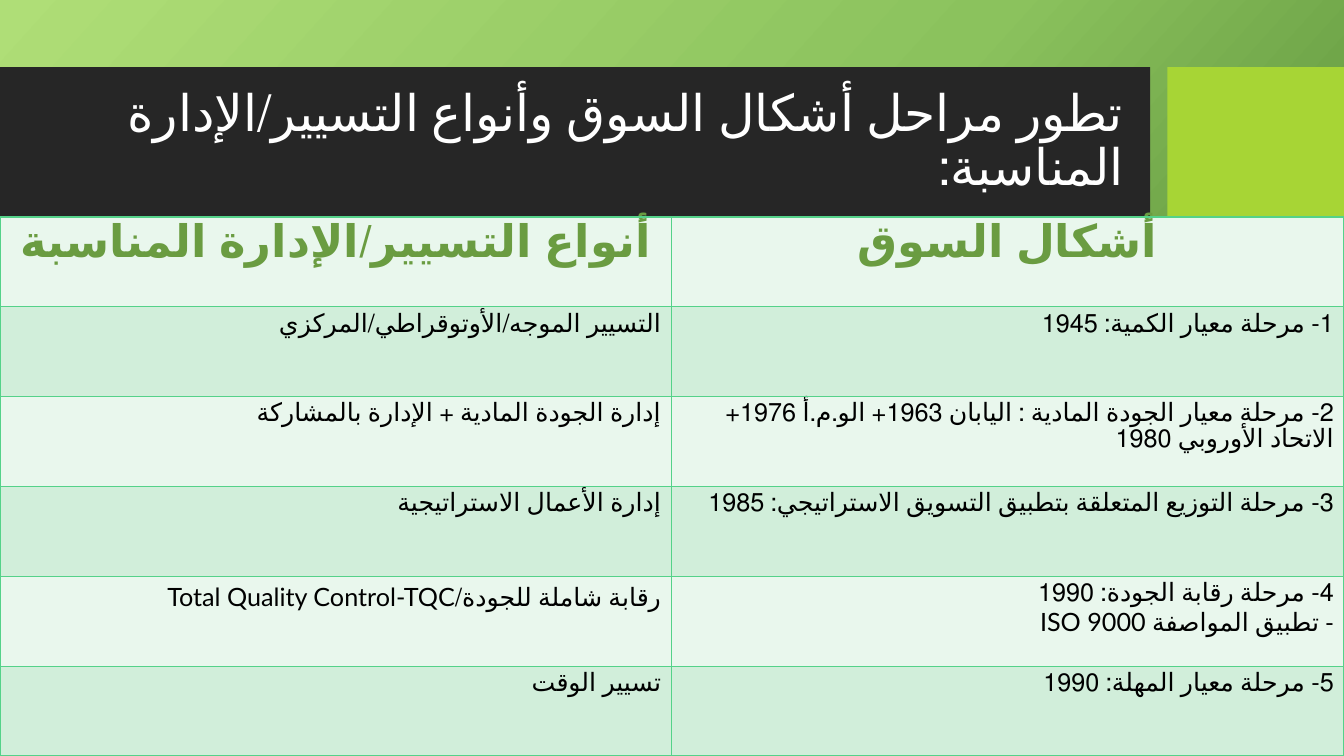
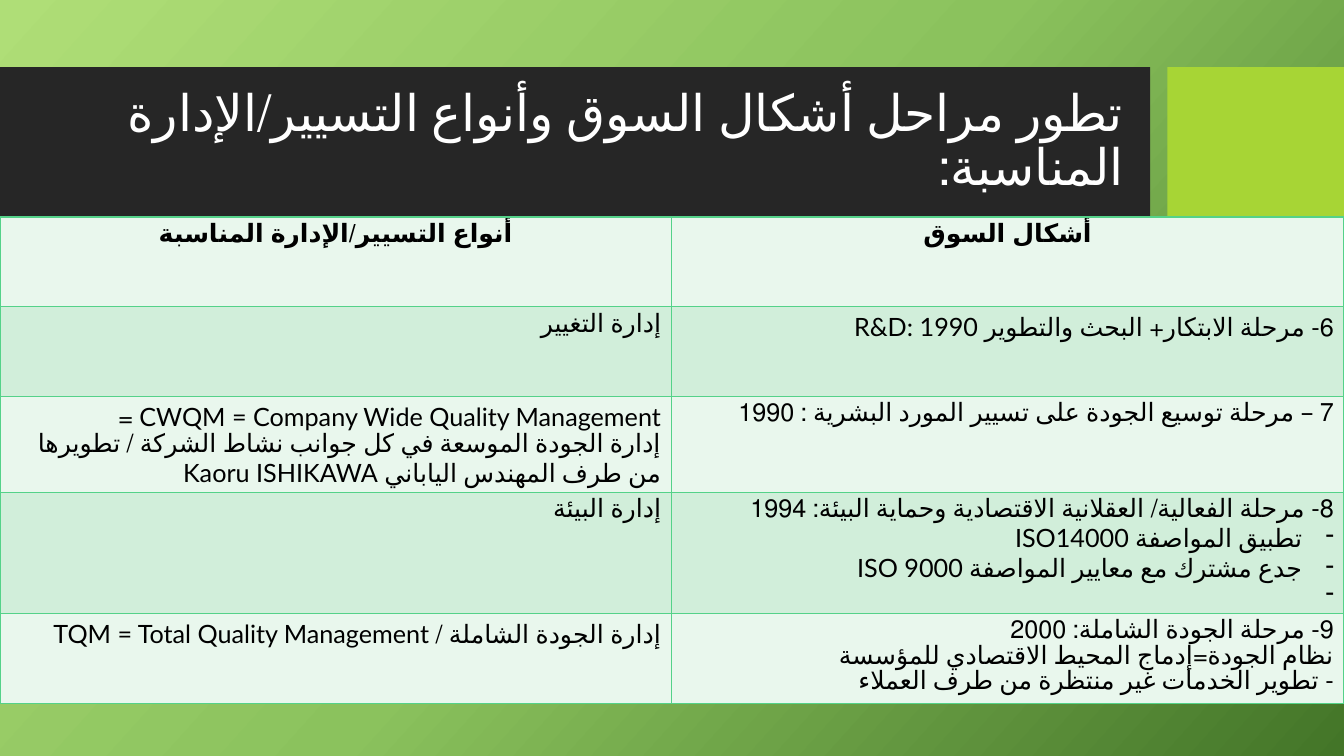
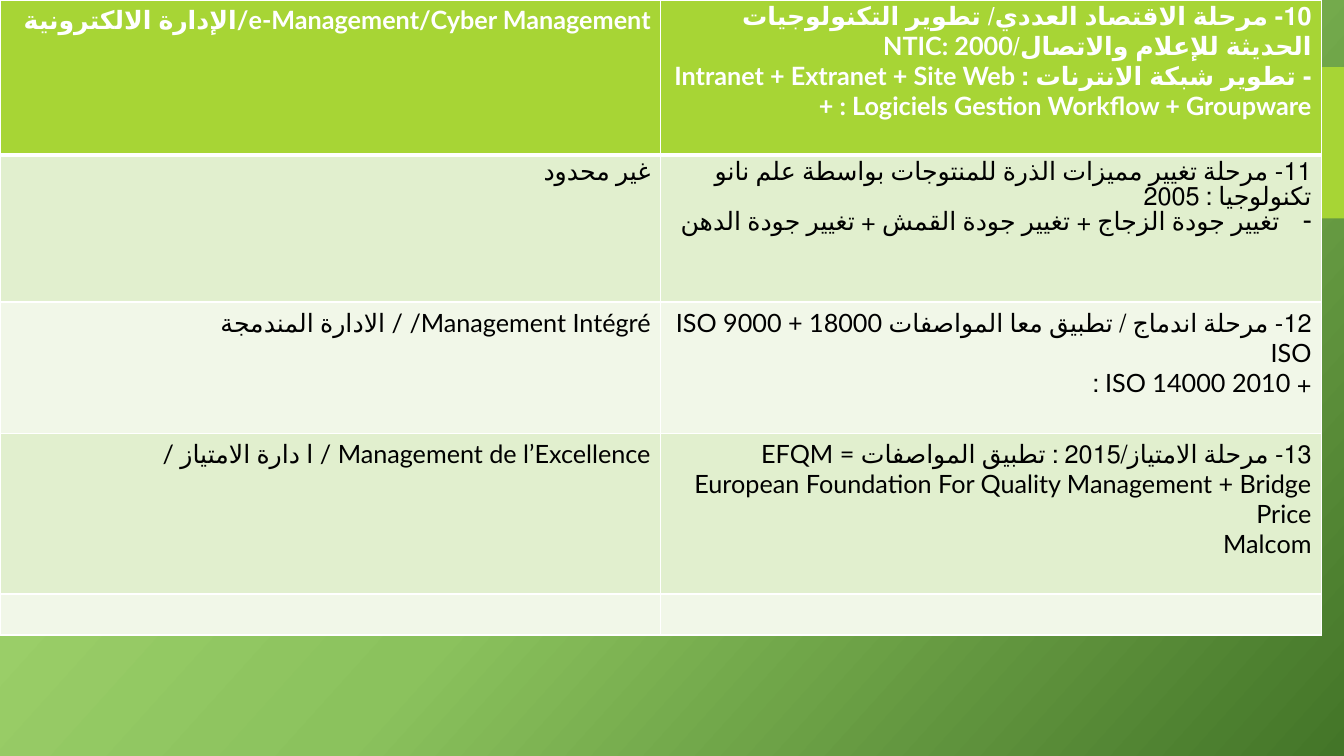
from copy import deepcopy

from pptx import Presentation
from pptx.dml.color import RGBColor
from pptx.enum.lang import MSO_LANGUAGE_ID
from pptx.enum.shapes import MSO_SHAPE
from pptx.enum.text import MSO_ANCHOR, MSO_AUTO_SIZE, PP_ALIGN
from pptx.oxml.ns import qn
from pptx.oxml.xmlchemy import OxmlElement
from pptx.util import Pt

RECT = MSO_SHAPE.RECTANGLE
MIDDLE = MSO_ANCHOR.MIDDLE
NO_FIT = MSO_AUTO_SIZE.NONE
RIGHT, CENTER = PP_ALIGN.RIGHT, PP_ALIGN.CENTER
ARABIC = MSO_LANGUAGE_ID.ARABIC_ALGERIA

WHITE = RGBColor(0xFF, 0xFF, 0xFF)
BLACK = RGBColor(0x00, 0x00, 0x00)
DARK = RGBColor(0x26, 0x26, 0x26)
LIME = RGBColor(0xA7, 0xD5, 0x35)
GREEN = RGBColor(0x6A, 0x9C, 0x41)
MINT = RGBColor(0x54, 0xD2, 0x89)
MINT_MID = RGBColor(0xD1, 0xEE, 0xDA)
MINT_PALE = RGBColor(0xE9, 0xF7, 0xED)
LIME_MID = RGBColor(0xE1, 0xEF, 0xCE)
LIME_PALE = RGBColor(0xF1, 0xF7, 0xE8)
STOPS = [(0, RGBColor(0xAF, 0xDE, 0x77)),
         (0.5, RGBColor(0x8B, 0xC2, 0x5D)),
         (1, RGBColor(0x43, 0x75, 0x28))]

FONT = "Lato"
TITLE = "تطور مراحل أشكال السوق وأنواع التسيير/الإدارة المناسبة:"
HEAD = ("أنواع التسيير/الإدارة المناسبة", "أشكال السوق")
DASH = "~"  # marks a dash bullet

# Cell texts: left and right column, one line per paragraph
EARLY = [
    HEAD,
    ("التسيير الموجه/الأوتوقراطي/المركزي", "1- مرحلة معيار الكمية: 1945"),
    ("إدارة الجودة المادية + الإدارة بالمشاركة",
     "2- مرحلة معيار الجودة المادية : اليابان 1963+ الو.م.أ 1976+ الاتحاد الأوروبي 1980"),
    ("إدارة الأعمال الاستراتيجية",
     "3- مرحلة التوزيع المتعلقة بتطبيق التسويق الاستراتيجي: 1985"),
    ("رقابة شاملة للجودة/Total Quality Control-TQC",
     "4- مرحلة رقابة الجودة: 1990\n- تطبيق المواصفة ISO 9000"),
    ("تسيير الوقت", "5- مرحلة معيار المهلة: 1990"),
]
MODERN = [
    HEAD,
    ("إدارة التغيير", "6- مرحلة الابتكار+ البحث والتطوير R&D: 1990"),
    ("CWQM = Company Wide Quality Management =\n"
     "إدارة الجودة الموسعة في كل جوانب نشاط الشركة / تطويرها من طرف المهندس الياباني Kaoru ISHIKAWA",
     "7 – مرحلة توسيع الجودة على تسيير المورد البشرية : 1990"),
    ("إدارة البيئة",
     "8- مرحلة الفعالية/ العقلانية الاقتصادية وحماية البيئة: 1994\n"
     "~تطبيق المواصفة ISO14000\n"
     "~جدع مشترك مع معايير المواصفة ISO 9000\n"
     "~ "),
    ("إدارة الجودة الشاملة / TQM = Total Quality Management",
     "9- مرحلة الجودة الشاملة: 2000\n"
     "نظام الجودة=إدماج المحيط الاقتصادي للمؤسسة\n"
     "- تطوير الخدمات غير منتظرة من طرف العملاء"),
]
RECENT = [
    ("الإدارة الالكترونية/e-Management/Cyber Management",
     "10- مرحلة الاقتصاد العددي/ تطوير التكنولوجيات الحديثة للإعلام والاتصال/NTIC: 2000\n"
     "- تطوير شبكة الانترنات : Intranet + Extranet + Site Web + : "
     "Logiciels Gestion Workflow + Groupware"),
    ("غير محدود",
     "11- مرحلة تغيير مميزات الذرة للمنتوجات بواسطة علم نانو تكنولوجيا : 2005\n"
     "~تغيير جودة الزجاج + تغيير جودة القمش + تغيير جودة الدهن"),
    ("الادارة المندمجة / /Management Intégré",
     "12- مرحلة اندماج / تطبيق معا المواصفات ISO 9000 + 18000 ISO\n"
     "+ ISO 14000 2010 :"),
    ("/ ا دارة الامتياز / Management de l’Excellence",
     "13- مرحلة الامتياز/2015 : تطبيق المواصفات EFQM = "
     "European Foundation For Quality Management + Bridge Price\nMalcom"),
    ("", ""),
]

# One entry per slide: titled, rows, top, column widths, row heights,
# header (size, colour, fill, rule width), line colour, band fills
DECK = [
    (True, EARLY, 155, (479.5, 480.5), [64.2] * 6,
     (32, GREEN, MINT_PALE, 1), MINT, (MINT_MID, MINT_PALE)),
    (True, MODERN, 155, (479.5, 480.5), [64.2, 64.2, 68.5, 86.5, 64.2],
     (18, BLACK, MINT_PALE, 1), MINT, (MINT_MID, MINT_PALE)),
    (False, RECENT, 0, (472, 472), [110.8, 105, 93.6, 115, 29.3],
     (18, WHITE, LIME, 3), WHITE, (LIME_MID, LIME_PALE)),
]


def fill_text(frame, text, size, color, bold, align, rtl):
    frame.text = text.replace(DASH, "")
    for para, line in zip(frame.paragraphs, text.split("\n")):
        para.alignment = align
        props = para._p.get_or_add_pPr()
        if rtl:
            props.set("rtl", "1")
        if line.startswith(DASH):
            props.set("marL", str(Pt(22.5)))
            props.set("indent", str(-Pt(22.5)))
            props.append(OxmlElement("a:buFontTx"))
            mark = OxmlElement("a:buChar")
            mark.set("char", "-")
            props.append(mark)
        font = para.font
        font.name, font.size, font.bold = FONT, Pt(size), bold
        font.color.rgb = color
        for run in para.runs:
            run.font.language_id = ARABIC


def add_border(cell, color, top, bottom):
    props = cell._tc.get_or_add_tcPr()
    for side, width in zip("LRTB", (1, 1, top, bottom)):
        line = OxmlElement("a:ln" + side)
        line.set("w", str(Pt(width)))
        paint = OxmlElement("a:solidFill")
        tint = OxmlElement("a:srgbClr")
        tint.set("val", str(color))
        paint.append(tint)
        line.append(paint)
        props.append(line)


prs = Presentation()
prs.slide_width, prs.slide_height = Pt(960), Pt(540)
master = prs.slide_master
titled_layout, blank = prs.slide_layouts[5], prs.slide_layouts[6]

# Shared gradient background
back = master.background.fill
back.gradient()
back.gradient_angle = 318
stop_list = master.element.find(".//" + qn("a:gsLst"))
stop_list.append(deepcopy(stop_list[0]))
for stop, (place, color) in zip(back.gradient_stops, STOPS):
    stop.position = place
    stop.color.rgb = color

# Shared title place
spot = titled_layout.placeholders[0]
spot.left, spot.top, spot.width, spot.height = Pt(53.3), Pt(59), Pt(756.7), Pt(85)

slides = [prs.slides.add_slide(titled_layout if row[0] else blank) for row in DECK]

# Shared bands, moved to the master
for num, (left, width, color) in enumerate([(0, 821.5, DARK), (833.8, 126.2, LIME)]):
    band = slides[0].shapes.add_shape(RECT, Pt(left), Pt(48), Pt(width), Pt(108))
    band.shadow.inherit = False
    band.fill.solid()
    band.fill.fore_color.rgb = color
    band.line.fill.background()
    band.element.nvSpPr.cNvPr.set("id", str(50 + num))
    master.shapes.element.insert(2 + num, band.element)

for slide, (titled, rows, top, cols, highs, head, edge, tints) in zip(slides, DECK):
    # Title
    if titled:
        frame = slide.shapes.title.text_frame
        fill_text(frame, TITLE, 36, WHITE, False, RIGHT, True)
        frame.paragraphs[0].line_spacing = 0.9
        frame.word_wrap = True
        frame.auto_size = NO_FIT
        frame.vertical_anchor = MIDDLE

    # Table
    table = slide.shapes.add_table(len(rows), 2, Pt(0), Pt(top),
                                   Pt(sum(cols)), Pt(sum(highs))).table
    table.first_row = table.horz_banding = False
    for col, width in zip(table.columns, cols):
        col.width = Pt(width)
    size, color, tint, rule = head
    for r, (row, high) in enumerate(zip(rows, highs)):
        table.rows[r].height = Pt(high)
        for c, text in enumerate(row):
            cell = table.cell(r, c)
            frame = cell.text_frame
            add_border(cell, edge, rule if r == 1 else 1, rule if r == 0 else 1)
            cell.fill.solid()
            rtl = c == 1 or (titled and r > 0)
            if r == 0:
                cell.fill.fore_color.rgb = tint
                fill_text(frame, text, size, color, True, CENTER if titled else RIGHT, rtl)
            else:
                cell.fill.fore_color.rgb = tints[(r - 1) % 2]
                fill_text(frame, text, 18, BLACK, False, RIGHT, rtl)

prs.save("out.pptx")
